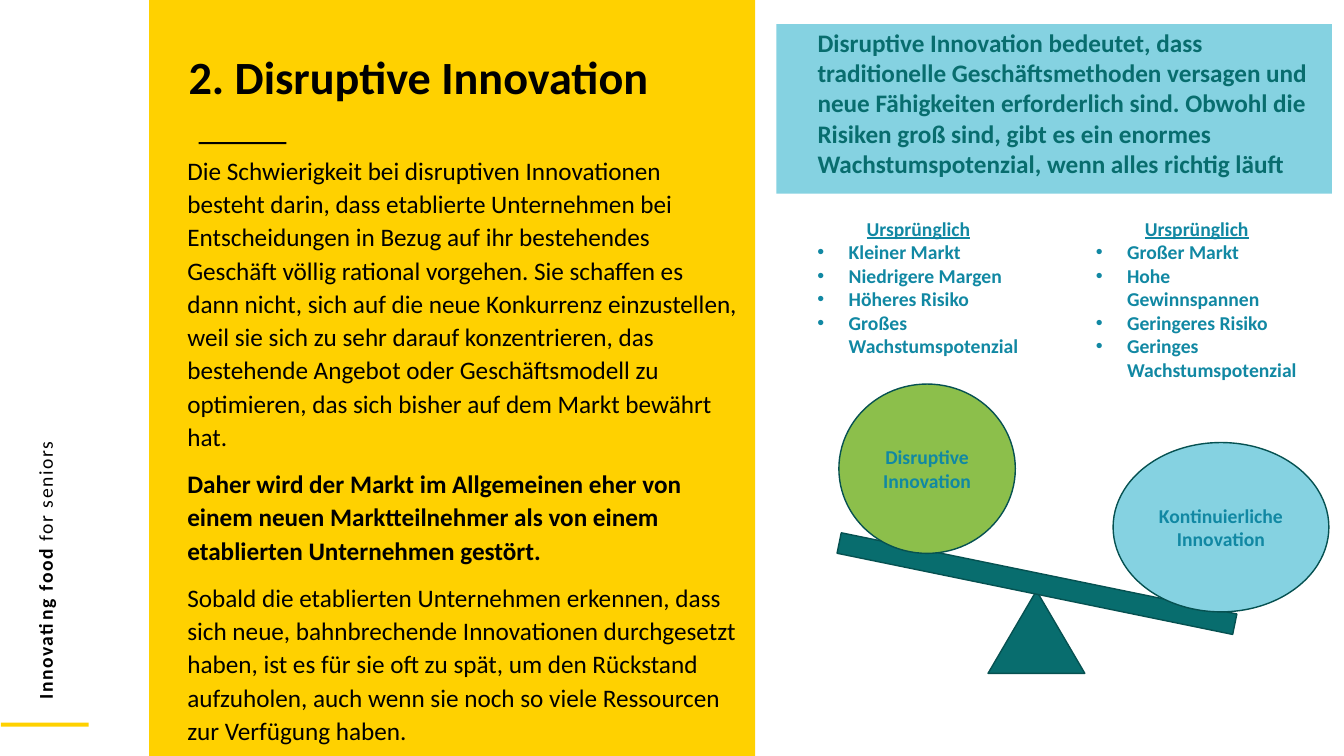
from dataclasses import dataclass
from typing import NamedTuple

from lxml import etree
from pptx import Presentation
from pptx.dml.color import RGBColor
from pptx.enum.shapes import MSO_SHAPE
from pptx.enum.text import MSO_ANCHOR, MSO_AUTO_SIZE, PP_ALIGN
from pptx.oxml.ns import qn
from pptx.util import Pt

EMU_PER_PX = 9144
RECTANGLE, TRIANGLE = MSO_SHAPE.RECTANGLE, MSO_SHAPE.ISOSCELES_TRIANGLE
BEAM, BALL = MSO_SHAPE.MATH_MINUS, MSO_SHAPE.FLOWCHART_CONNECTOR
LEFT, CENTER = PP_ALIGN.LEFT, PP_ALIGN.CENTER
TOP, MIDDLE = MSO_ANCHOR.TOP, MSO_ANCHOR.MIDDLE
NO_AUTOFIT = MSO_AUTO_SIZE.NONE
TITLE_ONLY = 5


@dataclass(frozen=True)
class Theme:
    """Colours and type sizes of the slide."""
    font: str = "Calibri"
    yellow: str = "FFD100"
    black: str = "000000"
    sky: str = "85D2E1"
    teal: str = "086D6E"
    edge: str = "065151"
    green: str = "8CBF4B"
    blue: str = "1188A3"
    title: int = 33
    body: int = 18
    label: int = 14


class Box(NamedTuple):
    """A rectangle in px."""
    left: int
    top: int
    width: int
    height: int

    def inner(self, left, top, width, height):
        """Return a box placed relative to this one."""
        return Box(self.left + left, self.top + top, width, height)

    def emu(self):
        """Return the four lengths in EMU."""
        return [value * EMU_PER_PX for value in self]


THEME = Theme()
PAGE = Box(0, 0, 1333, 750)
BODY_TEXTS = [
    ("Die Schwierigkeit bei disruptiven Innovationen besteht darin, dass etablierte "
     "Unternehmen bei Entscheidungen in Bezug auf ihr bestehendes Geschäft völlig "
     "rational vorgehen. Sie schaffen es dann nicht, sich auf die neue Konkurrenz "
     "einzustellen, weil sie sich zu sehr darauf konzentrieren, das bestehende Angebot "
     "oder Geschäftsmodell zu optimieren, das sich bisher auf dem Markt bewährt hat.", False),
    ("Daher wird der Markt im Allgemeinen eher von einem neuen Marktteilnehmer als von "
     "einem etablierten Unternehmen gestört.", True),
    ("Sobald die etablierten Unternehmen erkennen, dass sich neue, bahnbrechende "
     "Innovationen durchgesetzt haben, ist es für sie oft zu spät, um den Rückstand "
     "aufzuholen, auch wenn sie noch so viele Ressourcen zur Verfügung haben.", False),
]
CALLOUT_TEXT = (
    "Disruptive Innovation bedeutet, dass traditionelle Geschäftsmethoden versagen und "
    "neue Fähigkeiten erforderlich sind. Obwohl die Risiken groß sind, gibt es ein "
    "enormes Wachstumspotenzial, wenn alles richtig läuft")
TRAITS = [
    ["Kleiner Markt", "Niedrigere Margen", "Höheres Risiko", "Großes Wachstumspotenzial"],
    ["Großer Markt", "Hohe Gewinnspannen", "Geringeres Risiko", "Geringes Wachstumspotenzial"],
]


def apply(target, **values):
    """Set each named attribute on the target."""
    for name, value in values.items():
        setattr(target, name, value)


def add_span(para, text, size, color, **values):
    """Add a formatted run to a paragraph."""
    span = para.add_run()
    span.text = text
    apply(span.font, name=THEME.font, size=Pt(size), **values)
    span.font.color.rgb = RGBColor.from_string(color)
    return span


def next_para(frame, index, **values):
    """Return the first paragraph of a frame or a new one."""
    para = frame.add_paragraph() if index else frame.paragraphs[0]
    apply(para, **values)
    return para


def indent(para, margin, hanging=0, bullet=None):
    """Set the left margin of a paragraph and an optional bullet."""
    properties = para._p.get_or_add_pPr()
    properties.set("marL", str(margin * EMU_PER_PX))
    properties.set("indent", str(-hanging * EMU_PER_PX))
    if bullet:
        etree.SubElement(properties, qn("a:buFont")).set("typeface", "Arial")
        etree.SubElement(properties, qn("a:buChar")).set("char", bullet)


def add_text(page, box):
    """Add a wrapping text box and return its shape."""
    shape = page.shapes.add_textbox(*box.emu())
    apply(shape.text_frame, word_wrap=True, auto_size=NO_AUTOFIT, vertical_anchor=TOP)
    return shape


def add_figure(page, kind, box, fill, edge=None, rotation=0):
    """Add a flat filled shape."""
    shape = page.shapes.add_shape(kind, *box.emu())
    shape.shadow.inherit = False
    shape.rotation = rotation
    shape.fill.solid()
    shape.fill.fore_color.rgb = RGBColor.from_string(fill)
    if edge:
        shape.line.color.rgb = RGBColor.from_string(edge)
        shape.line.width = Pt(1)
    else:
        shape.line.fill.background()
    return shape


def add_sidebar(page, box):
    """Add the upright motto and its yellow rule."""
    add_figure(page, RECTANGLE, box.inner(1, 717, 87, 4), THEME.yellow)
    motto = add_text(page, box.inner(-105, 537, 300, 34))
    motto.rotation = 270
    para = motto.text_frame.paragraphs[0]
    for text, bold in (("Innovating food ", True), ("for seniors", False)):
        span = add_span(para, text, THEME.label, THEME.black, bold=bold)
        span._r.get_or_add_rPr().set("spc", "110")


def add_story(page, box):
    """Add the yellow panel with title, rule and body text."""
    add_figure(page, RECTANGLE, box, THEME.yellow)
    add_figure(page, RECTANGLE, box.inner(49, 141, 87, 2), THEME.black)
    title = page.shapes.title
    page.shapes._spTree.append(title._element)
    place = dict(zip(("left", "top", "width", "height"), box.inner(29, 49, 516, 64).emu()))
    apply(title, **place)
    apply(title.text_frame, word_wrap=True, auto_size=NO_AUTOFIT, vertical_anchor=TOP)
    heading = next_para(title.text_frame, 0, alignment=LEFT, line_spacing=0.9)
    add_span(heading, "2. Disruptive Innovation", THEME.title, THEME.black, bold=True)
    frame = add_text(page, box.inner(20, 146, 574, 604)).text_frame
    for index, (text, bold) in enumerate(BODY_TEXTS):
        para = next_para(frame, index, line_spacing=1.1, space_before=Pt(10 if index else 0))
        indent(para, 8)
        add_span(para, text, THEME.body, THEME.black, bold=bold)


def add_callout(page, box):
    """Add the key message on its light panel."""
    add_figure(page, RECTANGLE, box, THEME.sky)
    para = add_text(page, box.inner(31, -2, 521, 162)).text_frame.paragraphs[0]
    add_span(para, CALLOUT_TEXT, THEME.body, THEME.teal, bold=True)


def add_traits(page, box, traits):
    """Add an underlined heading over a bullet list."""
    frame = add_text(page, box).text_frame
    heading = next_para(frame, 0, alignment=CENTER)
    add_span(heading, "Ursprünglich", THEME.label, THEME.blue, bold=True, underline=True)
    for index, trait in enumerate(traits, 1):
        para = next_para(frame, index)
        indent(para, 31, 31, "•")
        add_span(para, trait, THEME.label, THEME.blue, bold=True)


def add_seesaw(page, box):
    """Add the tilted beam with its pivot and two labelled balls."""
    add_figure(page, TRIANGLE, box.inner(224, 205, 96, 82), THEME.teal, THEME.edge)
    add_figure(page, BEAM, box.inner(0, 154, 545, 88), THEME.teal, THEME.edge, 11.6)
    balls = [
        (box.inner(76, 0, 175, 168), THEME.green, ["Disruptive", "Innovation"]),
        (box.inner(348, 58, 214, 168), THEME.sky, ["Kontinuierliche Innovation"]),
    ]
    for place, fill, lines in balls:
        frame = add_figure(page, BALL, place, fill, THEME.edge).text_frame
        apply(frame, word_wrap=True, vertical_anchor=MIDDLE)
        for index, line in enumerate(lines):
            para = next_para(frame, index, alignment=CENTER)
            add_span(para, line, THEME.label, THEME.blue, bold=True)


def main():
    """Build the slide and save the deck."""
    deck = Presentation()
    apply(deck, slide_width=PAGE.width * EMU_PER_PX, slide_height=PAGE.height * EMU_PER_PX)
    page = deck.slides.add_slide(deck.slide_layouts[TITLE_ONLY])
    add_sidebar(page, PAGE.inner(0, 0, 148, 750))
    add_story(page, PAGE.inner(148, 0, 601, 750))
    add_callout(page, PAGE.inner(770, 24, 551, 168))
    add_seesaw(page, PAGE.inner(756, 381, 562, 287))
    for column, traits in enumerate(TRAITS):
        add_traits(page, PAGE.inner(801 + 276 * column, 210, 220, 175), traits)
    deck.save("out.pptx")


if __name__ == "__main__":
    main()
